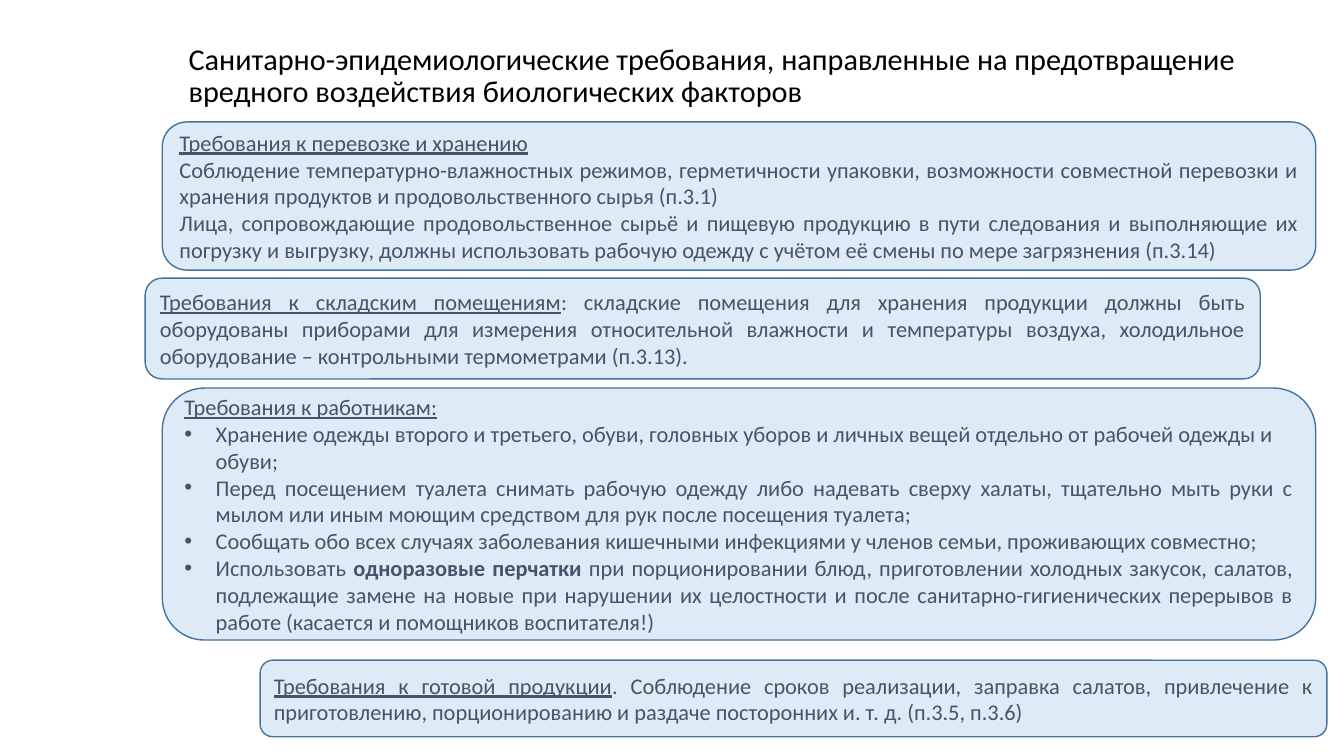
from dataclasses import dataclass

from lxml.etree import SubElement
from pptx import Presentation
from pptx.dml.color import RGBColor
from pptx.enum.shapes import MSO_SHAPE
from pptx.enum.text import MSO_ANCHOR, MSO_AUTO_SIZE, PP_ALIGN
from pptx.oxml.ns import qn
from pptx.slide import Slide
from pptx.util import Inches, Pt

FONT = "Calibri"
BLACK = RGBColor(0x00, 0x00, 0x00)
PALE_BLUE = RGBColor(0xDE, 0xEB, 0xF7)
EDGE_BLUE = RGBColor(0x43, 0x73, 0x9E)
SLATE = RGBColor(0x44, 0x54, 0x6A)


@dataclass
class Span:
    text: str
    underline: bool = False
    bold: bool = False


@dataclass
class Line:
    spans: list[Span]
    bullet: bool = False
    align: PP_ALIGN = PP_ALIGN.JUSTIFY


@dataclass
class Panel:
    left: float
    top: float
    width: float
    height: float
    lines: list[Line]


TITLE = ("Санитарно-эпидемиологические требования, направленные на предотвращение "
         "вредного воздействия биологических факторов")

PANELS = [
    Panel(1.61, 1.21, 11.44, 1.47, [
        Line([Span("Требования к перевозке и хранению", underline=True)]),
        Line([Span("Соблюдение температурно-влажностных режимов, герметичности упаковки, "
                   "возможности совместной перевозки и хранения продуктов и "
                   "продовольственного сырья (п.3.1)")]),
        Line([Span("Лица, сопровождающие продовольственное сырьё и пищевую продукцию в пути "
                   "следования и выполняющие их погрузку и выгрузку, должны использовать "
                   "рабочую одежду с учётом её смены по мере загрязнения (п.3.14)")]),
    ]),
    Panel(1.44, 2.76, 11.06, 1, [
        Line([Span("Требования к складским помещениям", underline=True),
              Span(": складские помещения для хранения продукции должны быть оборудованы "
                   "приборами для измерения относительной влажности и температуры воздуха, "
                   "холодильное оборудование – контрольными термометрами (п.3.13).")]),
    ]),
    Panel(1.61, 3.85, 11.44, 2.5, [
        Line([Span("Требования к работникам:", underline=True)]),
        Line([Span("Хранение одежды второго и третьего, обуви, головных уборов и личных "
                   "вещей отдельно от рабочей одежды и обуви;")],
             bullet=True, align=PP_ALIGN.LEFT),
        Line([Span("Перед посещением туалета снимать рабочую одежду либо надевать сверху "
                   "халаты, тщательно мыть руки с мылом или иным моющим средством для рук "
                   "после посещения туалета;")], bullet=True),
        Line([Span("Сообщать обо всех случаях заболевания кишечными инфекциями у членов "
                   "семьи, проживающих совместно;")], bullet=True),
        Line([Span("Использовать "), Span("одноразовые перчатки ", bold=True),
              Span("при порционировании блюд, приготовлении холодных закусок, салатов, "
                   "подлежащие замене на новые при нарушении их целостности и после "
                   "санитарно-гигиенических перерывов в работе (касается и помощников "
                   "воспитателя!)")], bullet=True),
    ]),
    Panel(2.58, 6.55, 10.58, 0.76, [
        Line([Span("Требования к готовой продукции", underline=True),
              Span(". Соблюдение сроков реализации, заправка салатов, привлечение к "
                   "приготовлению, порционированию и раздаче посторонних и. т. д. "
                   "(п.3.5, п.3.6)")]),
    ]),
]


def set_title(slide: Slide) -> None:
    title = slide.shapes.title
    title.left, title.top = Inches(1.77), Inches(0.4)
    title.width, title.height = Inches(10.96), Inches(0.72)
    frame = title.text_frame
    frame.text = TITLE
    frame.word_wrap = True
    frame.auto_size = MSO_AUTO_SIZE.NONE
    frame.vertical_anchor = MSO_ANCHOR.MIDDLE
    para = frame.paragraphs[0]
    para.alignment = PP_ALIGN.LEFT
    para.line_spacing = 0.9
    font = para.runs[0].font
    font.name, font.size = FONT, Pt(21.6)
    font.color.rgb = BLACK


def add_bullet(para) -> None:
    properties = para._p.get_or_add_pPr()
    properties.set("marL", str(Inches(0.31)))
    properties.set("indent", str(Inches(-0.31)))
    SubElement(properties, qn("a:buFont")).set("typeface", "Arial")
    SubElement(properties, qn("a:buChar")).set("char", "•")


def add_panel(slide: Slide, panel: Panel) -> None:
    box = slide.shapes.add_shape(
        MSO_SHAPE.ROUNDED_RECTANGLE, Inches(panel.left), Inches(panel.top),
        Inches(panel.width), Inches(panel.height))
    box.shadow.inherit = False
    box.fill.solid()
    box.fill.fore_color.rgb = PALE_BLUE
    box.line.color.rgb = EDGE_BLUE
    box.line.width = Pt(1)
    frame = box.text_frame
    frame.word_wrap = True
    frame.vertical_anchor = MSO_ANCHOR.MIDDLE
    for index, line in enumerate(panel.lines):
        para = frame.add_paragraph() if index else frame.paragraphs[0]
        para.alignment = line.align
        if line.bullet:
            add_bullet(para)
        for span in line.spans:
            run = para.add_run()
            run.text = span.text
            font = run.font
            font.name, font.size = FONT, Pt(16)
            font.color.rgb = SLATE
            font.underline, font.bold = span.underline, span.bold


def main() -> None:
    deck = Presentation()
    deck.slide_width, deck.slide_height = Inches(13.33), Inches(7.5)
    slide = deck.slides.add_slide(deck.slide_layouts.get_by_name("Title Only"))
    set_title(slide)
    for panel in PANELS:
        add_panel(slide, panel)
    deck.save("out.pptx")


if __name__ == "__main__":
    main()
